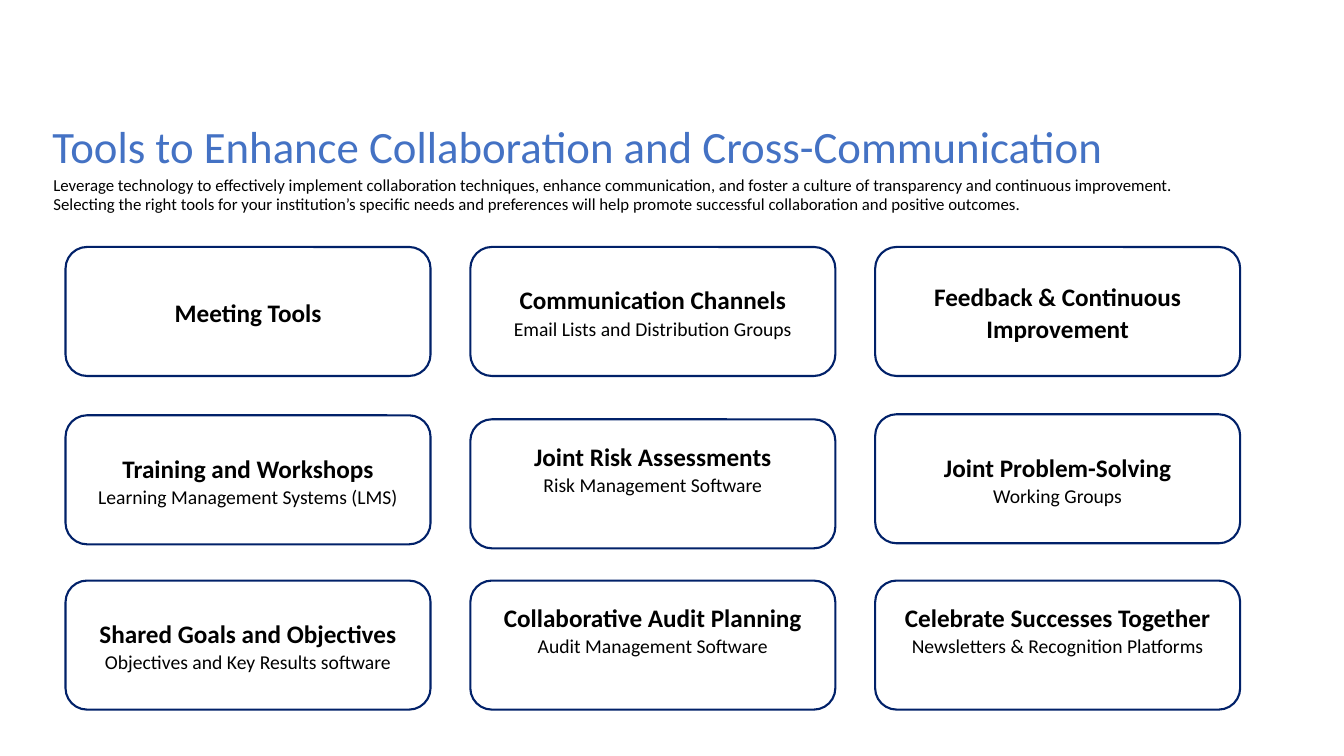
from dataclasses import dataclass

from lxml import etree
from pptx import Presentation
from pptx import util as u
from pptx.dml.color import RGBColor
from pptx.enum import shapes, text
from pptx.oxml.ns import qn


@dataclass(frozen=True)
class Theme:
    font: str = "Calibri"
    title_color: str = "4472C4"
    ink: str = "000000"
    paper: str = "FFFFFF"
    outline: str = "012169"
    title_size: int = 32
    intro_size: int = 12
    heading_size: int = 18
    detail_size: int = 14


theme = Theme()


def style(para, size, color, spacing, bold=False):
    para.line_spacing = spacing
    para.space_before = u.Pt(0)
    para.font.name = theme.font
    para.font.size = u.Pt(size)
    para.font.bold = bold
    para.font.color.rgb = RGBColor.from_string(color)


def place(box, left, top, width, height):
    box.left, box.top = u.Inches(left), u.Inches(top)
    box.width, box.height = u.Inches(width), u.Inches(height)


deck = Presentation()
deck.slide_width, deck.slide_height = u.Inches(13.33), u.Inches(7.5)
page = deck.slides.add_slide(deck.slide_layouts[1])

title, intro = page.shapes.title, page.placeholders[1]
place(title, 0.42, 1.19, 12.24, 0.49)
place(intro, 0.43, 1.71, 11.89, 0.49)
title.text_frame.text = "Tools to Enhance Collaboration and Cross-Communication"
intro.text_frame.text = (
    "Leverage technology to effectively implement collaboration techniques, "
    "enhance communication, and foster a culture of transparency and continuous "
    "improvement. Selecting the right tools for your institution’s specific needs "
    "and preferences will help promote successful collaboration and positive outcomes."
)
for box, size, color in (
    (title, theme.title_size, theme.title_color),
    (intro, theme.intro_size, theme.ink),
):
    frame = box.text_frame
    frame.auto_size = text.MSO_AUTO_SIZE.NONE
    frame.word_wrap = True
    frame.vertical_anchor = text.MSO_ANCHOR.TOP
    para = frame.paragraphs[0]
    para.alignment = text.PP_ALIGN.LEFT
    properties = para._p.get_or_add_pPr()
    properties.set("marL", "0")
    properties.set("indent", "0")
    etree.SubElement(properties, qn("a:buNone"))
    style(para, size, color, 0.9)

grid_left, column_step = 0.65, 4.015
row_tops = (2.45, 4.12, 5.76)
card_width, card_height = 3.62, 1.28
inset, raised_inset = 0.1, 0.42

cards = (
    (
        ("Meeting Tools",),
        ("Communication Channels", "Email Lists and Distribution Groups"),
        ("Feedback & Continuous Improvement",),
    ),
    (
        ("Training and Workshops", "Learning Management Systems (LMS)"),
        ("Joint Risk Assessments", "Risk Management Software"),
        ("Joint Problem-Solving", "Working Groups"),
    ),
    (
        ("Shared Goals and Objectives", "Objectives and Key Results software"),
        ("Collaborative Audit Planning", "Audit Management Software"),
        ("Celebrate Successes Together", "Newsletters & Recognition Platforms"),
    ),
)
raised = {(1, 1), (2, 1), (2, 2)}
nudges = {(1, 1): 0.04, (1, 2): -0.01}

for row, row_cards in enumerate(cards):
    for column, lines in enumerate(row_cards):
        cell = (row, column)
        card = page.shapes.add_shape(
            shapes.MSO_SHAPE.ROUNDED_RECTANGLE,
            u.Inches(grid_left + column * column_step),
            u.Inches(row_tops[row] + nudges.get(cell, 0)),
            u.Inches(card_width),
            u.Inches(card_height),
        )
        card.shadow.inherit = False
        card.fill.solid()
        card.fill.fore_color.rgb = RGBColor.from_string(theme.paper)
        card.line.color.rgb = RGBColor.from_string(theme.outline)
        card.line.width = u.Pt(1.5)
        frame = card.text_frame
        frame.word_wrap = True
        frame.vertical_anchor = text.MSO_ANCHOR.MIDDLE
        frame.margin_left = frame.margin_right = frame.margin_top = u.Inches(inset)
        frame.margin_bottom = u.Inches(raised_inset if cell in raised else inset)
        frame.text = "\n".join(lines)
        for index, para in enumerate(frame.paragraphs):
            para.alignment = text.PP_ALIGN.CENTER
            heading = index == 0
            size = theme.heading_size if heading else theme.detail_size
            style(para, size, theme.ink, 1.06, bold=heading)

deck.save("out.pptx")
